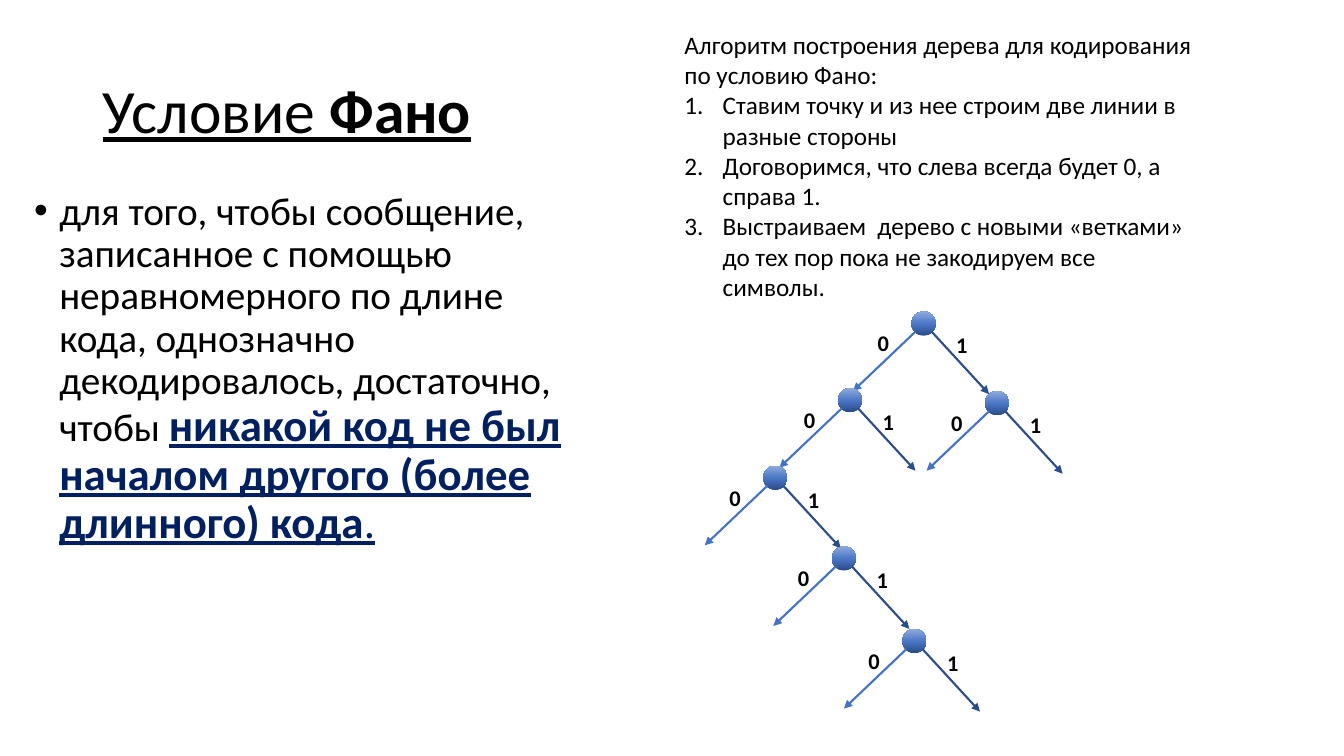
from copy import deepcopy
from dataclasses import dataclass

from pptx import Presentation
from pptx.dml.color import RGBColor
from pptx.enum import shapes, text
from pptx.oxml.ns import qn
from pptx.util import Inches, Pt

TITLE = [("Условие ", {}), ("Фано", {"bold": True})]
CONDITION = [
    ("для того, чтобы сообщение, записанное с помощью неравномерного по длине кода, "
     "однозначно декодировалось, достаточно, чтобы ", {}),
    ("никакой код не был началом другого (более длинного) кода",
     {"size": 32, "color": "002060", "bold": True, "underline": True}),
    (".", {"size": 32, "color": "002060", "underline": True}),
]
ALGORITHM = "Алгоритм построения дерева для кодирования по условию Фано:"
STEPS = [
    "Ставим точку и из нее строим две линии в разные стороны",
    "Договоримся, что слева всегда будет 0, а справа 1.",
    "Выстраиваем  дерево с новыми «ветками» до тех пор пока не закодируем все символы.",
]
# Left and top of every tree node, in inches
NODES = [(9.04, 3.09), (8.31, 3.85), (9.77, 3.88), (7.57, 4.62), (8.25, 5.42), (8.95, 6.24)]


@dataclass(frozen=True)
class Theme:
    font: str = "Calibri"
    ink: str = "000000"
    left_branch: str = "4472C4"
    right_branch: str = "2B4D89"
    node: tuple = ((0, "2A4B86"), (0.48, "4A76C6"), (1, "8FAADC"))
    title: int = 44
    body: int = 28
    steps: int = 18
    label: int = 16


THEME = Theme()
NODE_SIZE = 0.24
LABEL_SIZE = (0.32, 0.37)
# Offsets from a node's corner: branch start, branch end, label corner
BRANCHES = [
    ("0", THEME.left_branch, (0.04, 0.2), (-0.58, 0.79), (-0.44, 0.13)),
    ("1", THEME.right_branch, (0.2, 0.2), (0.77, 0.82), (0.34, 0.15)),
]


def write(paragraph, content, size, color=THEME.ink, bold=False, underline=False,
          align=text.PP_ALIGN.LEFT):
    """Add one run, aligning its paragraph."""
    paragraph.alignment = align
    run = paragraph.add_run()
    run.text = content
    font = run.font
    font.name, font.size, font.bold, font.underline = THEME.font, Pt(size), bold, underline
    font.color.rgb = RGBColor.from_string(color)


def mark(paragraph, indent, tag, **attributes):
    """Give a paragraph a hanging bullet or number."""
    properties = paragraph._p.get_or_add_pPr()
    properties.set("marL", str(Inches(indent)))
    properties.set("indent", str(-Inches(indent)))
    if tag == "a:buChar":
        bullet_font = properties.makeelement(qn("a:buFont"), {"typeface": "Arial"})
        properties.append(bullet_font)
    properties.append(properties.makeelement(qn(tag), attributes))


def add_text_box(container, left, top, width, height, wrap=True):
    box = container.add_textbox(Inches(left), Inches(top), Inches(width), Inches(height))
    box.text_frame.word_wrap = wrap
    return box.text_frame


def add_node(container, left, top):
    node = container.add_shape(shapes.MSO_SHAPE.OVAL, Inches(left), Inches(top),
                               Inches(NODE_SIZE), Inches(NODE_SIZE))
    node.shadow.inherit = False
    node.line.fill.background()
    node.fill.gradient()
    node.fill.gradient_angle = 90
    stop_list = node._element.spPr.find(qn("a:gradFill")).find(qn("a:gsLst"))
    stop_list.append(deepcopy(stop_list[-1]))
    for stop, (position, color) in zip(node.fill.gradient_stops, THEME.node):
        stop.position = position
        stop.color.rgb = RGBColor.from_string(color)


def add_arrow(container, start, end, color):
    arrow = container.add_connector(shapes.MSO_CONNECTOR.STRAIGHT,
                                    *(Inches(value) for value in start + end))
    arrow.line.color.rgb = RGBColor.from_string(color)
    arrow.line.width = Pt(1.5)
    line = arrow.line._get_or_add_ln()
    line.append(line.makeelement(qn("a:tailEnd"), {"type": "triangle"}))
    properties = arrow._element.spPr
    properties.append(properties.makeelement(qn("a:effectLst"), {}))


def add_branching(slide, left, top):
    """Draw a node with its two labelled branches."""
    group = slide.shapes.add_group_shape().shapes
    add_node(group, left, top)

    def place(offset):
        return left + offset[0], top + offset[1]

    for digit, color, start, end, label in BRANCHES:
        add_arrow(group, place(start), place(end), color)
        frame = add_text_box(group, *place(label), *LABEL_SIZE, wrap=False)
        write(frame.paragraphs[0], digit, THEME.label, bold=True, align=text.PP_ALIGN.CENTER)


def add_title(slide):
    title = slide.shapes.title
    title.left, title.top = Inches(0.92), Inches(0.4)
    title.width, title.height = Inches(10.03), Inches(1.45)
    frame = title.text_frame
    frame.vertical_anchor = text.MSO_ANCHOR.MIDDLE
    frame.paragraphs[0].line_spacing = 0.9
    for content, style in TITLE:
        write(frame.paragraphs[0], content, THEME.title, underline=True, **style)


def add_condition(slide):
    paragraph = add_text_box(slide.shapes, 0.24, 1.85, 5.67, 4.76).paragraphs[0]
    paragraph.line_spacing = 0.9
    mark(paragraph, 0.25, "a:buChar", char="•")
    for content, style in CONDITION:
        write(paragraph, content, **{"size": THEME.body, **style})


def add_algorithm(slide):
    frame = add_text_box(slide.shapes, 6.69, 0.24, 5.27, 2.83)
    frame.auto_size = text.MSO_AUTO_SIZE.SHAPE_TO_FIT_TEXT
    write(frame.paragraphs[0], ALGORITHM, THEME.steps)
    for step in STEPS:
        paragraph = frame.add_paragraph()
        mark(paragraph, 0.38, "a:buAutoNum", type="arabicPeriod")
        write(paragraph, step, THEME.steps)


def main():
    presentation = Presentation()
    presentation.slide_width, presentation.slide_height = Inches(13.33), Inches(7.5)
    slide = presentation.slides.add_slide(presentation.slide_layouts[5])
    add_title(slide)
    add_algorithm(slide)
    add_condition(slide)
    for left, top in NODES:
        add_branching(slide, left, top)
    presentation.save("out.pptx")


if __name__ == "__main__":
    main()
